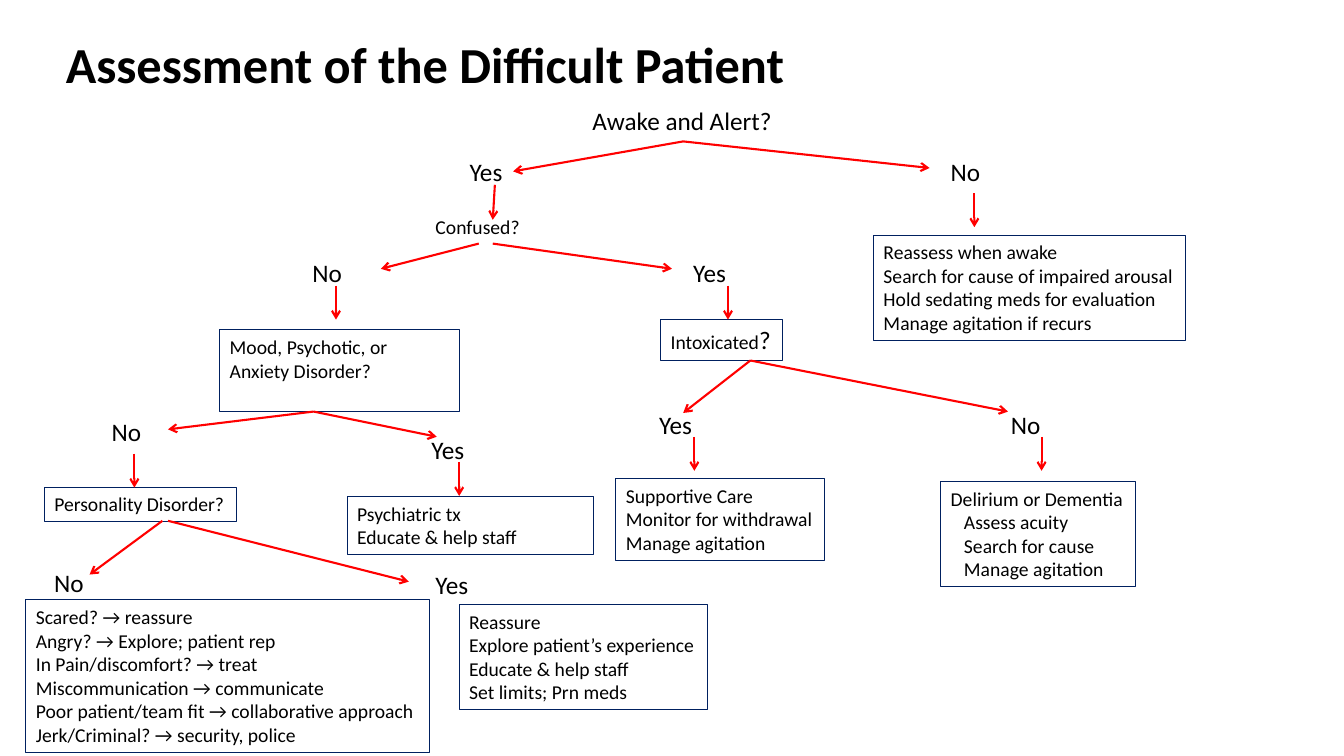
import pptx
import pptx.util
import pptx.dml.color
import pptx.enum.shapes
import pptx.enum.text
import pptx.oxml
import pptx.oxml.ns
from lxml import etree

Pt = pptx.util.Pt
COLORS = {"text": "000000", "border": "002060", "arrow": "FF0000"}
FONT = "Calibri"
BODY_SIZE, LABEL_SIZE, TITLE_SIZE = 14, 18, 36
SUB_INDENT = 9.5

# Questions and answers without a border: text, box, size
LABELS = [
    ("Awake and Alert?", (416, 72, 144, 29), LABEL_SIZE),
    ("Yes", (328.3, 108, 38, 29), LABEL_SIZE),
    ("No", (672, 108, 40, 29), LABEL_SIZE),
    ("Confused?", (304, 150, 75.6, 24.2), BODY_SIZE),
    ("No", (216, 180, 36, 29), LABEL_SIZE),
    ("Yes", (488, 180, 42.5, 29), LABEL_SIZE),
    ("No", (72.7, 294, 36, 29), LABEL_SIZE),
    ("Yes", (301, 306.7, 38, 29), LABEL_SIZE),
    ("Yes", (463.7, 288.7, 38, 29), LABEL_SIZE),
    ("No", (715, 288.7, 40, 29), LABEL_SIZE),
    ("No", (31.7, 402, 36, 29), LABEL_SIZE),
    ("Yes", (304, 403.2, 38, 29), LABEL_SIZE),
]

# Bordered boxes: lines, box, whether the box keeps its own size
BOXES = [
    (["Mood, Psychotic, or", "Anxiety Disorder?"], (157, 235.7, 171.5, 58.2), True),
    (["Personality Disorder?"], (31.7, 348, 137.5, 24.2), False),
    (["Psychiatric tx", "Educate & help staff"], (248, 354.7, 176, 41.2), True),
    (["Supportive Care", "Monitor for withdrawal", "Manage agitation"],
     (440, 342, 149, 58.2), False),
    (["Delirium or Dementia", ("Assess acuity", SUB_INDENT),
      ("Search for cause", SUB_INDENT), ("Manage agitation", SUB_INDENT)],
     (672, 344, 139, 75), False),
    (["Reassess when awake", "Search for cause of impaired arousal",
      "Hold sedating meds for evaluation", "Manage agitation if recurs"],
     (624, 168, 223, 75), False),
    (["Scared? → reassure", "Angry? → Explore; patient rep",
      "In Pain/discomfort? → treat", "Miscommunication → communicate",
      "Poor patient/team fit → collaborative approach",
      "Jerk/Criminal? → security, police"], (18.5, 428.5, 288.3, 109), False),
    (["Reassure", "Explore patient’s experience", "Educate & help staff",
      "Set limits; Prn meds"], (328, 432, 177.5, 75), False),
]
INTOXICATED_BOX = (472, 228.3, 87.3, 29)

# Branches from a question to its answers: start, end
BRANCHES = [
    ((488, 101), (366.5, 122.4)), ((488, 101), (664, 120)),
    ((342, 174), (272, 192)), ((352, 174), (480, 192)),
    ((224, 294), (120, 306.7)), ((224, 294), (312, 312)),
    ((536, 257.5), (488, 295)), ((536, 257.5), (720, 294)),
    ((116, 372), (64, 410.4)), ((120, 372), (292, 415.5)),
    ((353.5, 132), (352, 157)),
]
# Vertical steps from an answer to the next box: x, top
STEPS = [(696, 138), (240, 204), (520, 204), (96, 324),
         (328, 330), (496, 312), (744, 312)]
STEP_LENGTH = 24.3


def rgb(name):
    return pptx.dml.color.RGBColor.from_string(COLORS[name])


def prepare_frame(shape, fixed=False):
    frame = shape.text_frame
    frame.word_wrap = fixed
    frame.auto_size = (pptx.enum.text.MSO_AUTO_SIZE.NONE if fixed
                       else pptx.enum.text.MSO_AUTO_SIZE.SHAPE_TO_FIT_TEXT)
    frame.vertical_anchor = pptx.enum.text.MSO_ANCHOR.TOP
    return frame


def add_run(paragraph, text, size, bold=False):
    paragraph.alignment = pptx.enum.text.PP_ALIGN.LEFT
    run = paragraph.add_run()
    run.text = text
    run.font.name = FONT
    run.font.size = Pt(size)
    run.font.bold = bold
    run.font.color.rgb = rgb("text")


def add_title(slide, box):
    shape = slide.shapes.add_textbox(*map(Pt, box))
    frame = prepare_frame(shape, fixed=True)
    frame.vertical_anchor = pptx.enum.text.MSO_ANCHOR.MIDDLE
    add_run(frame.paragraphs[0], "Assessment of the Difficult Patient", TITLE_SIZE, True)


def add_label(slide, text, box, size):
    shape = slide.shapes.add_textbox(*map(Pt, box))
    add_run(prepare_frame(shape).paragraphs[0], text, size)


def add_box(slide, lines, box, fixed):
    shape = slide.shapes.add_shape(
        pptx.enum.shapes.MSO_SHAPE.RECTANGLE, *map(Pt, box))
    shape.shadow.inherit = False
    shape.fill.background()
    shape.line.color.rgb = rgb("border")
    shape.line.width = Pt(0.75)
    frame = prepare_frame(shape, fixed)
    for index, line in enumerate(lines):
        text, indent = line if isinstance(line, tuple) else (line, 0)
        paragraph = frame.add_paragraph() if index else frame.paragraphs[0]
        if indent:
            paragraph._p.get_or_add_pPr().set("marL", str(Pt(indent)))
        add_run(paragraph, text, BODY_SIZE)
    return frame


def add_arrow(slide, start, end):
    connector = slide.shapes.add_connector(
        pptx.enum.shapes.MSO_CONNECTOR.STRAIGHT, *map(Pt, start + end))
    connector.line.color.rgb = rgb("arrow")
    connector.line.width = Pt(1.5)
    qn = pptx.oxml.ns.qn
    etree.SubElement(connector.line._get_or_add_ln(), qn("a:tailEnd"), type="arrow")
    etree.SubElement(connector._element.spPr, qn("a:effectLst"))


def build_decision_tree(slide):
    for text, box, size in LABELS:
        add_label(slide, text, box, size)
    for lines, box, fixed in BOXES:
        add_box(slide, lines, box, fixed)
    # The question mark is larger than its word
    frame = add_box(slide, ["Intoxicated"], INTOXICATED_BOX, False)
    add_run(frame.paragraphs[0], "?", LABEL_SIZE)
    for start, end in BRANCHES:
        add_arrow(slide, start, end)
    for x, top in STEPS:
        add_arrow(slide, (x, top), (x, top + STEP_LENGTH))


def main():
    presentation = pptx.Presentation()
    presentation.slide_width = Pt(960)
    presentation.slide_height = Pt(540)
    slide = presentation.slides.add_slide(presentation.slide_layouts[6])
    add_title(slide, (40, 0, 920, 90))
    build_decision_tree(slide)
    presentation.save("out.pptx")


if __name__ == "__main__":
    main()
